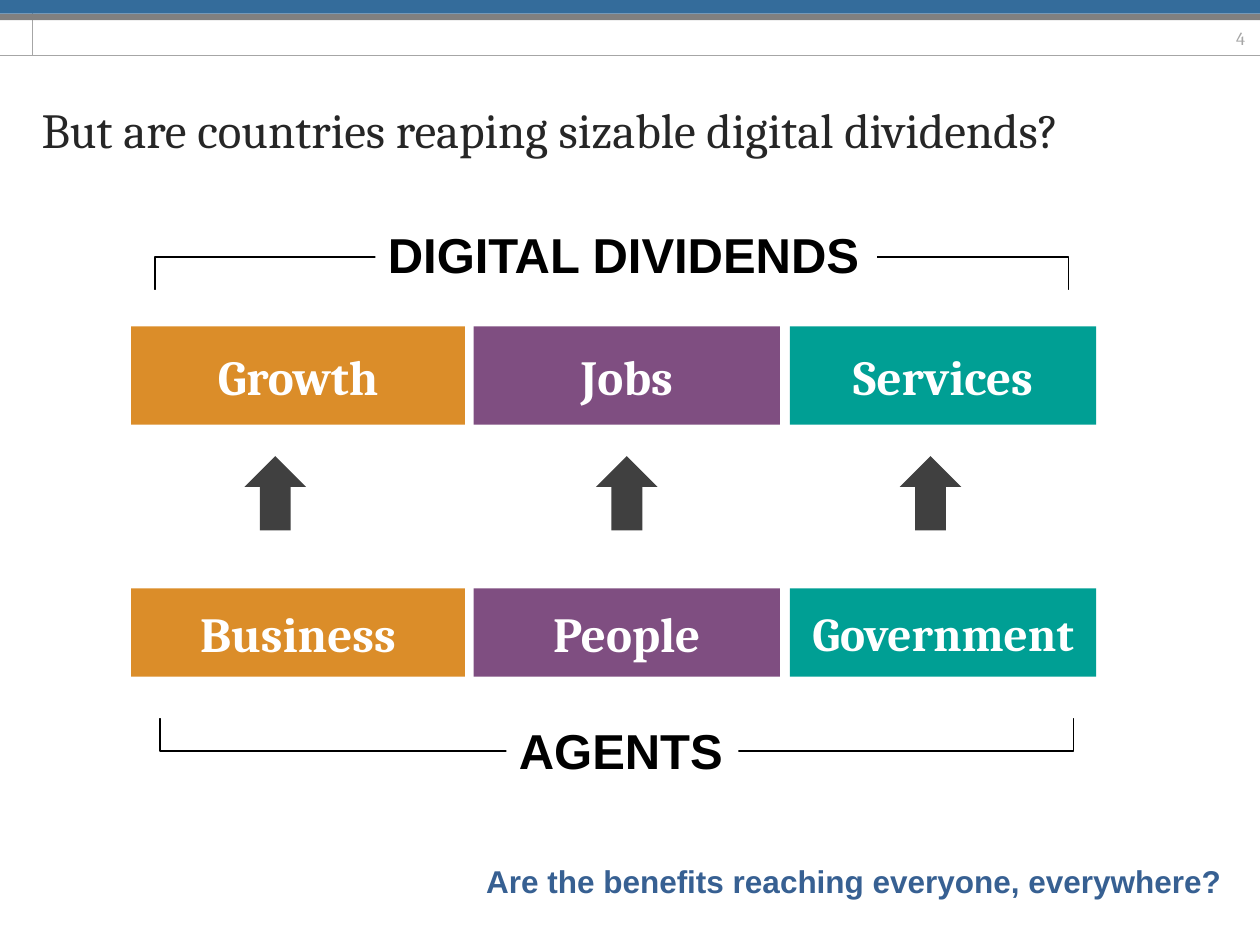
from lxml.etree import SubElement
from pptx import Presentation
from pptx.dml.color import RGBColor
from pptx.enum.shapes import MSO_CONNECTOR, MSO_SHAPE
from pptx.enum.text import MSO_ANCHOR, MSO_AUTO_SIZE, PP_ALIGN
from pptx.oxml.ns import qn
from pptx.util import Inches, Pt

WHITE = RGBColor(0xFF, 0xFF, 0xFF)
BLACK = RGBColor(0, 0, 0)
ORANGE = RGBColor(0xDB, 0x8D, 0x29)
PURPLE = RGBColor(0x7F, 0x4E, 0x81)
TEAL = RGBColor(0x00, 0x9F, 0x94)
CHARCOAL = RGBColor(0x40, 0x40, 0x40)
TITLE_INK = RGBColor(0x26, 0x26, 0x26)
RULE_GRAY = RGBColor(0xA6, 0xA6, 0xA6)
BAND_GRAY = RGBColor(0x80, 0x80, 0x80)
BAND_BLUE = RGBColor(0x34, 0x6C, 0x9B)
QUESTION_BLUE = RGBColor(0x37, 0x60, 0x92)

# left, width, colour, dividend, agent, agent size, arrow left
COLUMNS = (
    (1.04, 2.65, ORANGE, "Growth", "Business", 28, 1.94),
    (3.76, 2.43, PURPLE, "Jobs", "People", 28, 4.73),
    (6.27, 2.43, TEAL, "Services", "Government", 27, 7.14),
)


def write(shape, text, size, font, color, bold=True, align=PP_ALIGN.LEFT, anchor=MSO_ANCHOR.MIDDLE):
    """Put one formatted paragraph into a shape."""
    frame = shape.text_frame
    frame.text = text
    frame.word_wrap = True
    frame.vertical_anchor = anchor
    paragraph = frame.paragraphs[0]
    paragraph.alignment = align
    paragraph.font.size = Pt(size)
    paragraph.font.name = font
    paragraph.font.bold = bold
    paragraph.font.color.rgb = color


def add_block(slide, box, fill=None, outline=None, kind=MSO_SHAPE.RECTANGLE):
    """Add a flat preset shape with an optional fill and outline."""
    block = slide.shapes.add_shape(kind, *map(Inches, box))
    block.shadow.inherit = False
    if fill is None:
        block.fill.background()
    else:
        block.fill.solid()
        block.fill.fore_color.rgb = fill
    if outline is None:
        block.line.fill.background()
    else:
        block.line.color.rgb = outline
        block.line.width = Pt(0.75)
    return block


def add_rule(slide, start, end):
    """Add a thin gray header line."""
    rule = slide.shapes.add_connector(MSO_CONNECTOR.STRAIGHT, *map(Inches, start + end))
    rule.line.color.rgb = RULE_GRAY
    rule.line.width = Pt(0.5)
    SubElement(rule._element.spPr, qn("a:effectLst"))


def add_bracket(slide, frame_box, cover_box):
    """Add an outlined frame whose open side is covered in white."""
    add_block(slide, frame_box, outline=BLACK)
    add_block(slide, cover_box, WHITE)


def add_caption(slide, box, text, size, color, fill=None):
    """Add a bold one-line Arial caption that fits its text."""
    caption = slide.shapes.add_textbox(*map(Inches, box))
    if fill is not None:
        caption.fill.solid()
        caption.fill.fore_color.rgb = fill
    write(caption, text, size, "Arial", color, anchor=MSO_ANCHOR.TOP)
    caption.text_frame.word_wrap = False
    caption.text_frame.auto_size = MSO_AUTO_SIZE.SHAPE_TO_FIT_TEXT


def add_label_block(slide, box, fill, text, size=28):
    """Add a coloured block with a centred white label."""
    block = add_block(slide, box, fill)
    write(block, text, size, "Cambria", WHITE, align=PP_ALIGN.CENTER)


def add_header(slide):
    """Add the top bands, rules and page number."""
    add_rule(slide, (0.26, 0), (0.26, 0.44))
    add_rule(slide, (0, 0.44), (10, 0.44))
    page_number = slide.shapes.add_textbox(*map(Inches, (9.53, 0.1, 0.45, 0.4)))
    write(page_number, "4", 10.5, "Cambria", RULE_GRAY, bold=False, align=PP_ALIGN.RIGHT)
    add_block(slide, (0, 0.11, 10.01, 0.05), BAND_GRAY)
    add_block(slide, (0, -0.02, 10.01, 0.13), BAND_BLUE)


def add_title(slide, box, text):
    """Place and format the title placeholder."""
    title = slide.shapes.title
    title.left, title.top, title.width, title.height = map(Inches, box)
    write(title, text, 28, "Cambria", TITLE_INK, bold=False)
    title.text_frame.auto_size = MSO_AUTO_SIZE.NONE


def main():
    """Build and save the digital dividends slide."""
    presentation = Presentation()
    presentation.slide_width = Inches(10)
    presentation.slide_height = Inches(7.5)
    slide = presentation.slides.add_slide(presentation.slide_layouts[5])

    add_header(slide)
    add_title(slide, (0.23, 0.66, 9.33, 0.72), "But are countries reaping sizable digital dividends?")
    add_bracket(slide, (1.23, 2.04, 7.25, 1.11), (0.86, 2.3, 7.75, 0.94))
    add_bracket(slide, (1.27, 4.85, 7.25, 1.11), (1.04, 4.76, 7.75, 0.94))
    add_caption(slide, (2.98, 1.73, 3.98, 0.57), "DIGITAL DIVIDENDS", 28, BLACK, WHITE)
    add_caption(slide, (4.02, 5.67, 1.84, 0.57), "AGENTS", 28, BLACK, WHITE)

    for left, width, color, dividend, agent, agent_size, arrow_left in COLUMNS:
        add_label_block(slide, (left, 2.59, width, 0.78), color, dividend)
        add_label_block(slide, (left, 4.67, width, 0.7), color, agent, agent_size)
        add_block(slide, (arrow_left, 3.62, 0.49, 0.59), CHARCOAL, kind=MSO_SHAPE.UP_ARROW)

    add_caption(slide, (3.76, 6.79, 6.09, 0.4), "Are the benefits reaching everyone, everywhere?", 18, QUESTION_BLUE)
    presentation.save("out.pptx")


if __name__ == "__main__":
    main()
